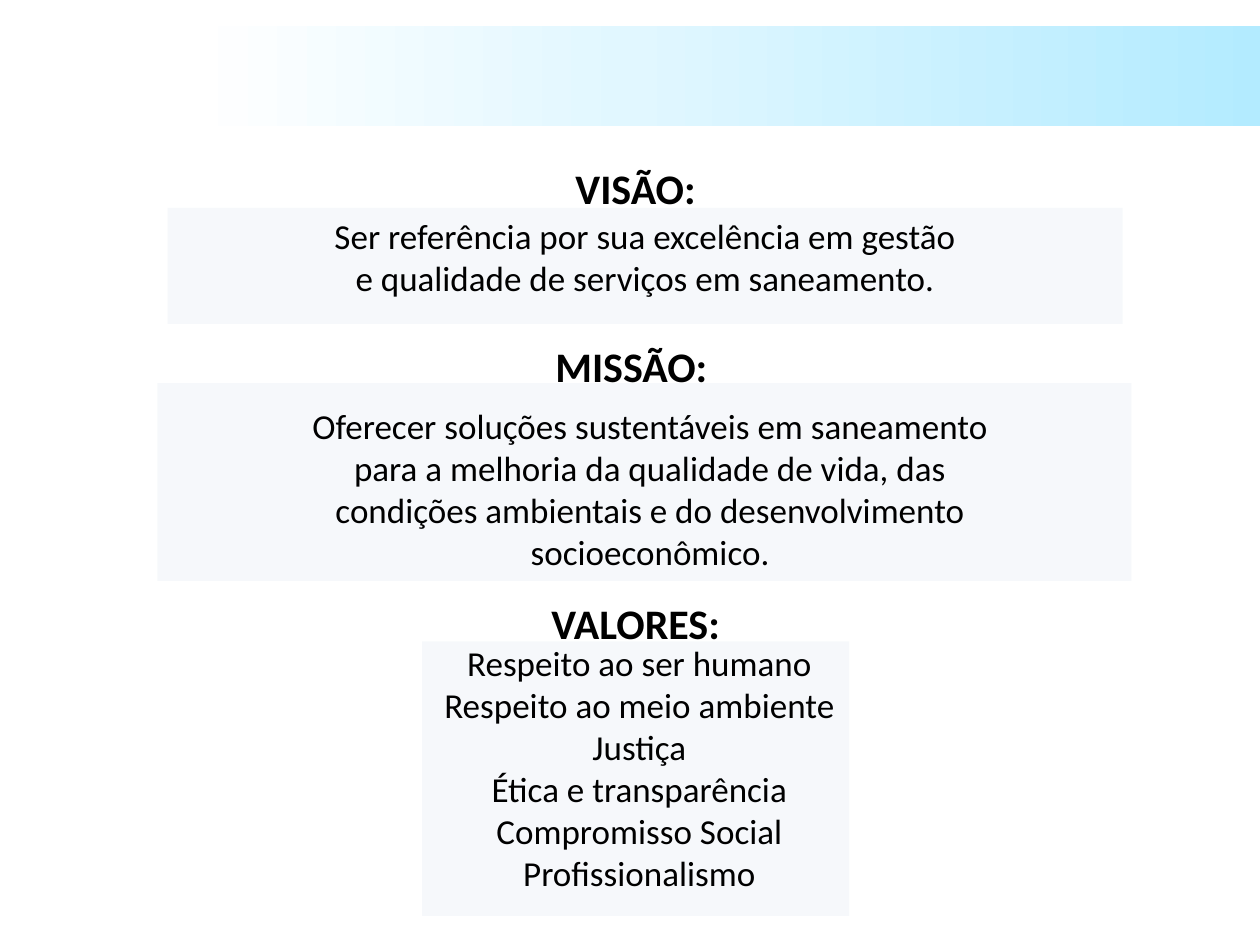
from copy import deepcopy
from dataclasses import dataclass

from lxml import etree
from pptx import Presentation
from pptx.dml.color import RGBColor
from pptx.enum.shapes import MSO_SHAPE
from pptx.enum.text import MSO_ANCHOR, MSO_AUTO_SIZE, PP_ALIGN
from pptx.oxml.ns import qn
from pptx.util import Inches, Pt


@dataclass(frozen=True)
class Theme:
    font: str = "Calibri"
    text: str = "000000"
    panel: str = "4F81BD"
    panel_alpha: int = 5
    banner: tuple = ((0, "B3EBFF"), (0.5, "E1F7FF"), (0.85, "FFFFFF"))
    heading_size: int = 24
    body_size: int = 20


THEME = Theme()

# heading, heading box, panel box, text box, anchor, paragraphs
SECTIONS = [
    ("VISÃO:", (4.46, 1.24, 1.17, 0.5), (1.33, 1.65, 7.58, 0.92),
     (0.51, 1.65, 9.22, 0.99), MSO_ANCHOR.TOP,
     ["Ser referência por sua excelência em gestão\v"
      "e qualidade de serviços em saneamento."]),
    ("MISSÃO:", (4.3, 2.65, 1.42, 0.5), (1.25, 3.04, 7.73, 1.57),
     (0.91, 2.82, 8.5, 2.11), MSO_ANCHOR.MIDDLE,
     ["Oferecer soluções sustentáveis em saneamento",
      "para a melhoria da qualidade de vida, das",
      "condições ambientais e do desenvolvimento",
      "socioeconômico."]),
    ("VALORES:", (4.27, 4.69, 1.55, 0.5), (3.35, 5.09, 3.39, 2.18),
     (0.66, 4.92, 8.83, 2.34), MSO_ANCHOR.MIDDLE,
     ["Respeito ao ser humano", "Respeito ao meio ambiente", "Justiça",
      "Ética e transparência", "Compromisso Social", "Profissionalismo"]),
]


def add_rect(s, box):
    sp = s.shapes.add_shape(MSO_SHAPE.RECTANGLE, *map(Inches, box))
    sp.shadow.inherit = False
    sp.line.fill.background()
    return sp


def add_banner(s, box):
    """Band that fades from right to left."""
    fill = add_rect(s, box).fill
    fill.gradient()
    fill.gradient_angle = 180
    last = fill.gradient_stops[-1]._gs
    last.addnext(deepcopy(last))
    for stop, (position, color) in zip(fill.gradient_stops, THEME.banner):
        stop.position = position
        stop.color.rgb = RGBColor.from_string(color)


def add_panel(s, box):
    sp = add_rect(s, box)
    sp.fill.solid()
    sp.fill.fore_color.rgb = RGBColor.from_string(THEME.panel)
    color = sp._element.spPr.find(qn("a:solidFill")).find(qn("a:srgbClr"))
    etree.SubElement(color, qn("a:alpha"), val=str(THEME.panel_alpha * 1000))


def add_text(s, box, paragraphs, size, bold=False, anchor=MSO_ANCHOR.TOP, wrap=True):
    tf = s.shapes.add_textbox(*map(Inches, box)).text_frame
    tf.word_wrap = wrap
    tf.auto_size = MSO_AUTO_SIZE.NONE if wrap else MSO_AUTO_SIZE.SHAPE_TO_FIT_TEXT
    tf.vertical_anchor = anchor
    for i, text in enumerate(paragraphs):
        p = tf.add_paragraph() if i else tf.paragraphs[0]
        p.text = text
        p.alignment = PP_ALIGN.CENTER
        for r in p.runs:
            r.font.name = THEME.font
            r.font.size = Pt(size)
            r.font.bold = bold
            r.font.color.rgb = RGBColor.from_string(THEME.text)


def add_section(s, heading, heading_box, panel_box, text_box, anchor, paragraphs):
    add_panel(s, panel_box)
    add_text(s, text_box, paragraphs, THEME.body_size, anchor=anchor)
    add_text(s, heading_box, [heading], THEME.heading_size, bold=True, wrap=False)


def main():
    prs = Presentation()
    prs.slide_width, prs.slide_height = Inches(10), Inches(7.5)
    s = prs.slides.add_slide(prs.slide_layouts[6])
    add_banner(s, (0, 0.21, 10, 0.79))
    for section in SECTIONS:
        add_section(s, *section)
    prs.save("out.pptx")


if __name__ == "__main__":
    main()
